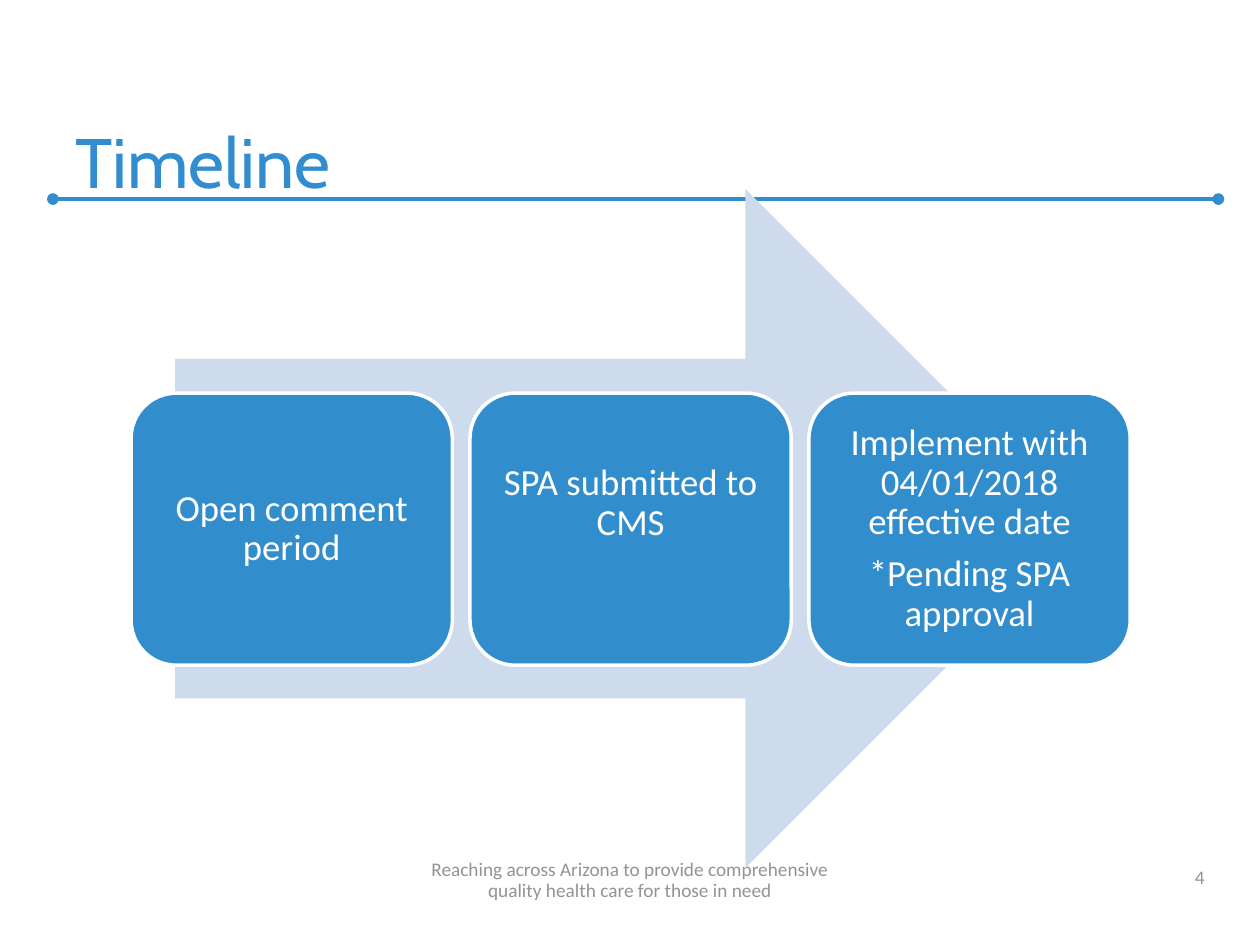
from lxml import etree
from pptx import Presentation
from pptx import util as u
from pptx.dml.color import RGBColor
from pptx.enum import shapes, text
from pptx.oxml.ns import qn

BLUE = RGBColor(0x31, 0x8D, 0xCC)
TITLE_BLUE = RGBColor(0x31, 0x8D, 0xCF)
PALE_BLUE = RGBColor(0xCE, 0xDB, 0xEC)
GRAY = RGBColor(0x93, 0x93, 0x93)
WHITE = RGBColor(0xFF, 0xFF, 0xFF)

deck = Presentation()
deck.slide_width, deck.slide_height = u.Inches(10), u.Inches(7.5)
slide = deck.slides.add_slide(deck.slide_layouts[5])


def style(paragraph, font_name, size, color, align):
    paragraph.alignment = align
    paragraph.font.name = font_name
    paragraph.font.size = u.Pt(size)
    paragraph.font.color.rgb = color


def add_note(left, top, width, height, words, align):
    note = slide.shapes.add_textbox(*map(u.Inches, (left, top, width, height)))
    frame = note.text_frame
    frame.word_wrap = True
    frame.vertical_anchor = text.MSO_ANCHOR.BOTTOM
    frame.text = words
    style(frame.paragraphs[0], "Calibri", 11, GRAY, align)
    return frame.paragraphs[0]


title = slide.shapes.title
title.left, title.top, title.width, title.height = map(u.Inches, (0.5, 0.33, 9.08, 1.33))
title.text_frame.text = "Timeline"
title.text_frame.auto_size = text.MSO_AUTO_SIZE.NONE
title.text_frame.vertical_anchor = text.MSO_ANCHOR.BOTTOM
style(title.text_frame.paragraphs[0], "Cabin", 40, TITLE_BLUE, text.PP_ALIGN.LEFT)

rule = slide.shapes.add_connector(
    shapes.MSO_CONNECTOR.STRAIGHT, *map(u.Inches, (0.42, 1.58, 9.67, 1.58)))
rule.line.color.rgb = BLUE
rule.line.width = u.Pt(2.25)
for end in ("a:headEnd", "a:tailEnd"):
    etree.SubElement(rule.line._get_or_add_ln(), qn(end), type="oval")
etree.SubElement(rule._element.spPr, qn("a:effectLst"))

add_note(7.33, 6.78, 2.33, 0.32, "4", text.PP_ALIGN.RIGHT)
motto = add_note(
    0, 6.78, 10, 0.42,
    "Reaching across Arizona to provide comprehensive\vquality health care for those in need",
    text.PP_ALIGN.CENTER)
motto.line_spacing = u.Pt(12)

arrow = slide.shapes.add_shape(
    shapes.MSO_SHAPE.RIGHT_ARROW, *map(u.Inches, (1.39, 1.5, 7.22, 5.39)))
arrow.shadow.inherit = False
arrow.fill.solid()
arrow.fill.fore_color.rgb = PALE_BLUE
arrow.line.fill.background()

STEPS = [
    (["Open comment period"], 0.09),
    (["SPA submitted to CMS"], 0.5),
    (["Implement with 04/01/2018 effective date", "*Pending SPA approval"], 0.09),
]
FIRST_LEFT, STEP_WIDTH, STEP_PITCH = 1.04, 2.55, 2.69

for column, (lines, bottom_inset) in enumerate(STEPS):
    step = slide.shapes.add_shape(
        shapes.MSO_SHAPE.ROUNDED_RECTANGLE,
        *map(u.Inches, (FIRST_LEFT + column * STEP_PITCH, 3.12, STEP_WIDTH, 2.16)))
    step.shadow.inherit = False
    step.fill.solid()
    step.fill.fore_color.rgb = BLUE
    step.line.color.rgb = WHITE
    step.line.width = u.Pt(2)
    frame = step.text_frame
    frame.word_wrap = True
    frame.vertical_anchor = text.MSO_ANCHOR.MIDDLE
    frame.margin_left = frame.margin_right = frame.margin_top = u.Inches(0.09)
    frame.margin_bottom = u.Inches(bottom_inset)
    frame.text = "\n".join(lines)
    for paragraph in frame.paragraphs:
        paragraph.line_spacing = 0.9
        paragraph.space_after = u.Pt(7)
        style(paragraph, "Calibri", 21, WHITE, text.PP_ALIGN.CENTER)

deck.save("out.pptx")
